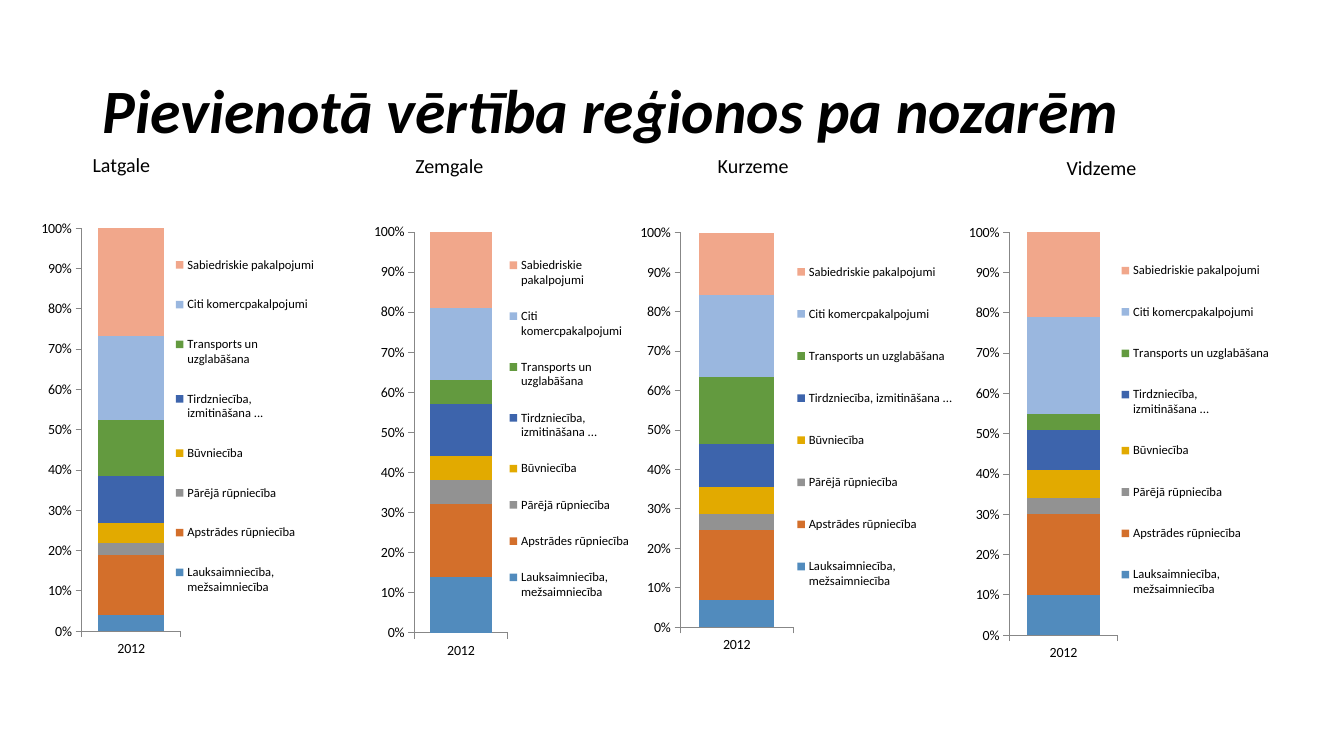
from lxml import etree
from pptx import Presentation
from pptx import util as u
from pptx.chart.data import CategoryChartData
from pptx.dml.color import RGBColor
from pptx.enum import chart as charts, text
from pptx.oxml import parse_xml
from pptx.oxml.ns import nsdecls, qn

FONT = "Calibri"
SECTORS = [
    ("Lauksaimniecība, mežsaimniecība", "518BBD"),
    ("Apstrādes rūpniecība", "D36F2B"),
    ("Pārējā rūpniecība", "929292"),
    ("Būvniecība", "E2AA00"),
    ("Tirdzniecība, izmitināšana ...", "3D64AC"),
    ("Transports un uzglabāšana", "639A3F"),
    ("Citi komercpakalpojumi", "9AB7DF"),
    ("Sabiedriskie pakalpojumi", "F1A78B"),
]
# Region, label position, chart box, sector shares in percent
REGIONS = [
    ("Latgale", (0.82, 1.51), (0.41, 2.02, 2.79, 4.8), (4, 15, 3, 5, 12, 14, 21, 27)),
    ("Zemgale", (4.02, 1.52), (3.71, 2.06, 2.63, 4.77), (14, 18, 6, 6, 13, 6, 18, 19)),
    ("Kurzeme", (7.02, 1.52), (6.35, 2.07, 3.16, 4.7), (7, 18, 4, 7, 11, 17, 21, 16)),
    ("Vidzeme", (10.48, 1.54), (9.61, 2.06, 3.05, 4.8), (10, 20, 4, 7, 10, 4, 24, 21)),
]


def color(value):
    return RGBColor.from_string(value)


def style_font(font, size):
    font.name = FONT
    font.size = u.Pt(size)
    font.color.rgb = color("000000")


def add_text(slide, box, content, size, spacing, emphasis=False):
    shape = slide.shapes.add_textbox(*map(u.Inches, box))
    frame = shape.text_frame
    frame.word_wrap = True
    frame.vertical_anchor = text.MSO_ANCHOR.MIDDLE
    frame.text = content
    paragraph = frame.paragraphs[0]
    paragraph.line_spacing = spacing
    font = paragraph.runs[0].font
    style_font(font, size)
    font.bold = font.italic = emphasis


def set_layout(parent, before, fractions, inner=False):
    """Place a chart part by its left, top, width and height fractions."""
    for old in parent.findall(qn("c:layout")):
        parent.remove(old)
    layout = parse_xml(f"<c:layout {nsdecls('c')}><c:manualLayout/></c:layout>")
    settings = [("layoutTarget", "inner")] if inner else []
    settings += [("xMode", "edge"), ("yMode", "edge")]
    settings += zip("xywh", map(str, fractions))
    for name, value in settings:
        etree.SubElement(layout[0], qn(f"c:{name}")).set("val", value)
    before.addprevious(layout)


def style_axis(axis):
    axis.has_major_gridlines = False
    axis.major_tick_mark = charts.XL_TICK_MARK.OUTSIDE
    axis.format.line.color.rgb = color("878787")
    axis.format.line.width = u.Pt(0.75)
    style_font(axis.tick_labels.font, 10)


def add_region_chart(slide, box, shares):
    data = CategoryChartData()
    data.categories = ["2012"]
    for (sector, _), share in zip(SECTORS, shares):
        data.add_series(sector, [share])
    chart = slide.shapes.add_chart(
        charts.XL_CHART_TYPE.COLUMN_STACKED_100, *map(u.Inches, box), data).chart
    chart.has_title = False
    style_font(chart.font, 10)

    # Bars
    plot = chart.plots[0]
    plot.gap_width = 50
    plot.overlap = 100
    plot.vary_by_categories = False
    for series, (_, fill) in zip(plot.series, SECTORS):
        series.format.fill.solid()
        series.format.fill.fore_color.rgb = color(fill)

    # Axes
    style_axis(chart.category_axis)
    style_axis(chart.value_axis)
    chart.value_axis.minimum_scale = 0
    chart.value_axis.maximum_scale = 1
    chart.value_axis.major_unit = 0.1
    chart.value_axis.tick_labels.number_format = "0%"
    chart.value_axis.tick_labels.number_format_is_linked = False

    # Legend
    chart.has_legend = True
    legend = chart.legend
    legend.position = charts.XL_LEGEND_POSITION.RIGHT
    legend.include_in_layout = False
    style_font(legend.font, 9)

    # Plot on the left half, legend on the right half
    left = round(0.385 / box[2], 3)
    plot_area = chart.plots[0]._element.getparent()
    set_layout(plot_area, plot_area.find(qn("c:barChart")),
               (left, 0.051, 0.355, 0.833), inner=True)
    legend_element = legend._element
    set_layout(legend_element, legend_element.find(qn("c:overlay")),
               (0.485, 0.06, 0.5, 0.8))


def add_region(slide, name, label_at, chart_box, shares):
    add_text(slide, (*label_at, 1.55, 0.3), name, 14.3, 0.7)
    add_region_chart(slide, chart_box, shares)


def main():
    presentation = Presentation()
    presentation.slide_width = u.Inches(13.33)
    presentation.slide_height = u.Inches(7.5)
    slide = presentation.slides.add_slide(presentation.slide_layouts[6])
    add_text(slide, (0.92, 0.4, 11.5, 1.45),
             "Pievienotā vērtība reģionos pa nozarēm", 44, 0.9, emphasis=True)
    for region in REGIONS:
        add_region(slide, *region)
    presentation.save("out.pptx")


if __name__ == "__main__":
    main()
